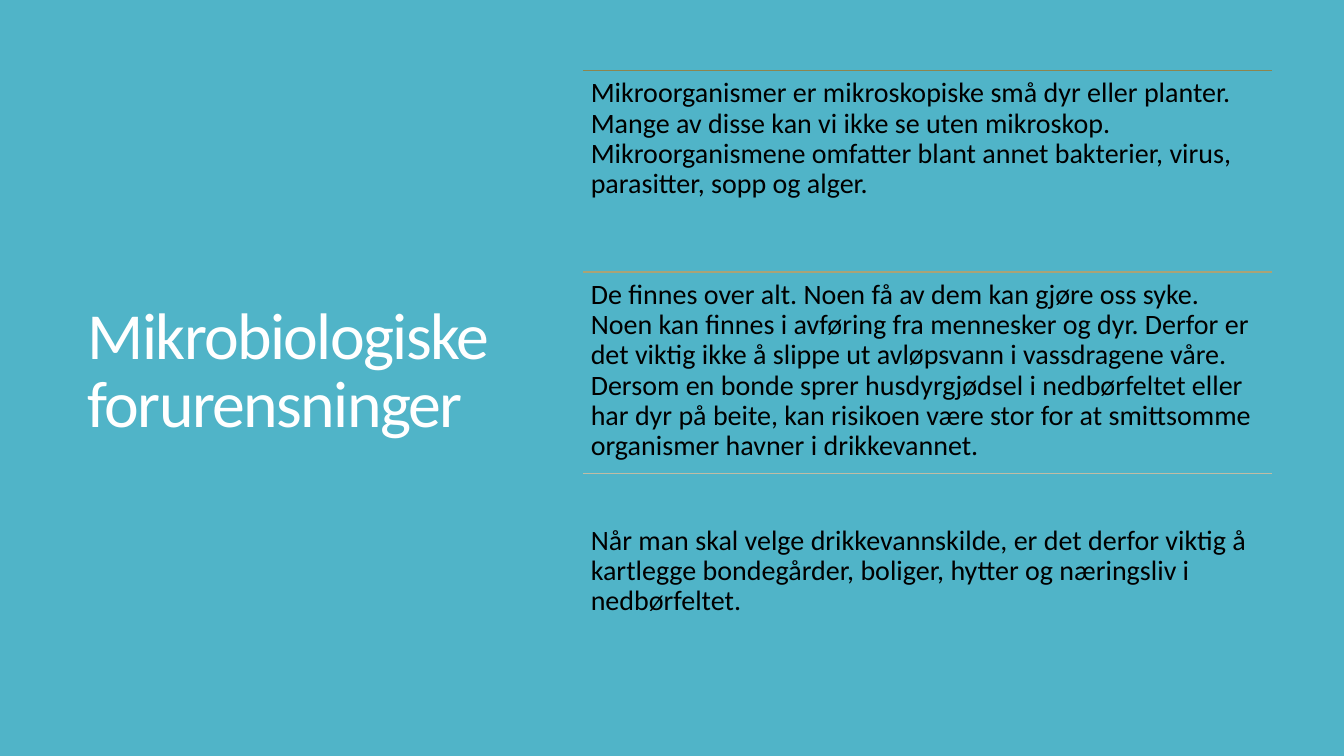
from lxml import etree
from pptx import Presentation
from pptx.dml.color import RGBColor
from pptx.enum.shapes import MSO_CONNECTOR
from pptx.enum.text import MSO_ANCHOR, MSO_AUTO_SIZE, PP_ALIGN
from pptx.oxml.ns import qn
from pptx.util import Inches, Pt

STRAIGHT = MSO_CONNECTOR.STRAIGHT
MIDDLE, TOP = MSO_ANCHOR.MIDDLE, MSO_ANCHOR.TOP
LEFT = PP_ALIGN.LEFT
NO_FIT = MSO_AUTO_SIZE.NONE

HEADING = "Mikrobiologiske forurensninger"
FACTS = [
    ("8D854E", 0.08,
     "Mikroorganismer er mikroskopiske små dyr eller planter. Mange av disse kan vi "
     "ikke se uten mikroskop. Mikroorganismene omfatter blant annet bakterier, virus, "
     "parasitter, sopp og alger."),
    ("AAA376", 0.08,
     "De finnes over alt. Noen få av dem kan gjøre oss syke. Noen kan finnes i avføring "
     "fra mennesker og dyr. Derfor er det viktig ikke å slippe ut avløpsvann i "
     "vassdragene våre. Dersom en bonde sprer husdyrgjødsel i nedbørfeltet eller har dyr "
     "på beite, kan risikoen være stor for at smittsomme organismer havner i "
     "drikkevannet."),
    ("C1BCA4", 0.52,
     "Når man skal velge drikkevannskilde, er det derfor viktig å kartlegge bondegårder, "
     "boliger, hytter og næringsliv i nedbørfeltet."),
]

BACKGROUND, WHITE, BLACK = "50B4C8", "FFFFFF", "000000"
CONTENT_TOP, CONTENT_HEIGHT = 0.7, 6.01
HEADING_LEFT, HEADING_WIDTH = 0.77, 4.37
FACT_LEFT, FACT_WIDTH = 5.78, 6.84
ROW_HEIGHT = round(CONTENT_HEIGHT / len(FACTS), 2)
INSET = 0.08


def color(hex_value):
    return RGBColor.from_string(hex_value)


def write(frame, text, size, hex_value, spacing, anchor):
    frame.text = text
    frame.word_wrap = True
    frame.auto_size = NO_FIT
    frame.vertical_anchor = anchor
    paragraph = frame.paragraphs[0]
    paragraph.alignment = LEFT
    paragraph.line_spacing = spacing
    font = paragraph.runs[0].font
    font.name = "Calibri"
    font.size = Pt(size)
    font.color.rgb = color(hex_value)
    return paragraph


def add_heading(slide):
    heading = slide.shapes.title
    heading.left, heading.top = Inches(HEADING_LEFT), Inches(CONTENT_TOP)
    heading.width, heading.height = Inches(HEADING_WIDTH), Inches(CONTENT_HEIGHT)
    paragraph = write(heading.text_frame, HEADING, 47, WHITE, 0.85, MIDDLE)
    paragraph.runs[0].font._element.set("spc", "-120")


def add_fact(slide, row, rule_color, top_inset, text):
    left, width = Inches(FACT_LEFT), Inches(FACT_WIDTH)
    top = Inches(CONTENT_TOP + row * ROW_HEIGHT)
    rule = slide.shapes.add_connector(STRAIGHT, left, top, left + width, top)
    rule.line.color.rgb = color(rule_color)
    rule.line.width = Pt(1)
    etree.SubElement(rule._element.spPr, qn("a:effectLst"))

    fact = slide.shapes.add_textbox(left, top, width, Inches(ROW_HEIGHT))
    frame = fact.text_frame
    write(frame, text, 20, BLACK, 0.9, TOP)
    frame.margin_left = frame.margin_right = frame.margin_bottom = Inches(INSET)
    frame.margin_top = Inches(top_inset)


def main():
    deck = Presentation()
    deck.slide_width, deck.slide_height = Inches(13.33), Inches(7.5)
    slide = deck.slides.add_slide(deck.slide_layouts[5])
    slide.background.fill.solid()
    slide.background.fill.fore_color.rgb = color(BACKGROUND)
    add_heading(slide)
    for row, (rule_color, top_inset, text) in enumerate(FACTS):
        add_fact(slide, row, rule_color, top_inset, text)
    deck.save("out.pptx")


if __name__ == "__main__":
    main()
